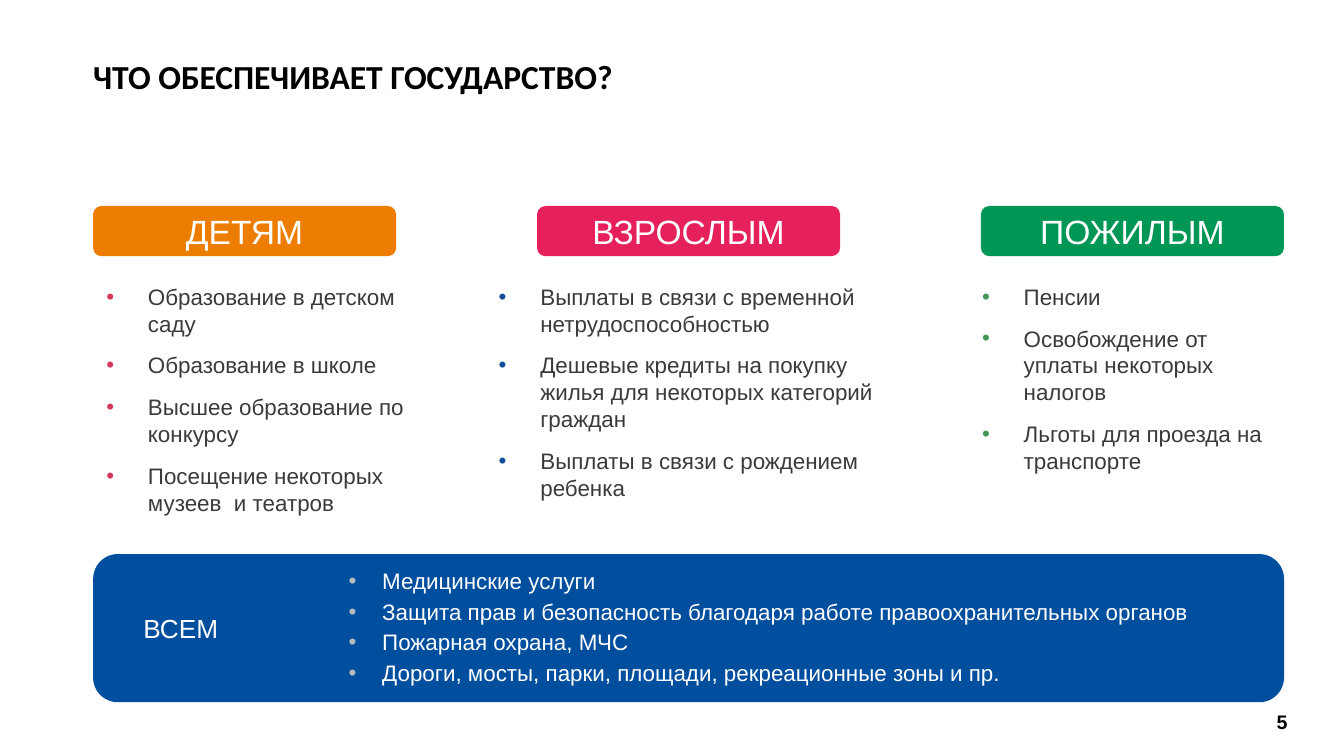
from collections import namedtuple

from lxml.etree import SubElement
from pptx import Presentation
from pptx.dml.color import RGBColor
from pptx.enum.shapes import MSO_SHAPE as Preset
from pptx.enum.text import MSO_ANCHOR as Anchor, PP_ALIGN as Align
from pptx.oxml.ns import qn
from pptx.util import Inches, Pt

BLACK = RGBColor(0x00, 0x00, 0x00)
WHITE = RGBColor(0xFF, 0xFF, 0xFF)
GRAPHITE = RGBColor(0x39, 0x3B, 0x3B)
ORANGE = RGBColor(0xED, 0x7D, 0x00)
PINK = RGBColor(0xE5, 0x20, 0x5A)
GREEN = RGBColor(0x00, 0x96, 0x55)
BLUE = RGBColor(0x00, 0x4E, 0x9E)
RED_BULLET = RGBColor(0xD3, 0x39, 0x5C)
BLUE_BULLET = RGBColor(0x14, 0x4E, 0x99)
GREEN_BULLET = RGBColor(0x43, 0x97, 0x57)
GREY_BULLET = RGBColor(0xB7, 0xBB, 0xBE)

WIDTH = Inches(10)
HEIGHT = WIDTH * 9 // 16
COLUMN, ROW = WIDTH / 100, HEIGHT / 100
LEFT_EDGE, GROUP_WIDTH, GROUP_STEP = 6.93, 22.55, 33.03

Box = namedtuple("Box", "left top width height")
Group = namedtuple("Group", "name fill bullet list_shift list_width items")

GROUPS = [
    Group("ДЕТЯМ", ORANGE, RED_BULLET, 0, 1.15, [
        "Образование в детском саду",
        "Образование в школе",
        "Высшее образование по конкурсу",
        "Посещение некоторых музеев  и театров",
    ]),
    Group("ВЗРОСЛЫМ", PINK, BLUE_BULLET, -0.17, 1.36, [
        "Выплаты в связи с временной нетрудоспособностью",
        "Дешевые кредиты на покупку жилья для некоторых категорий граждан",
        "Выплаты в связи с рождением ребенка",
    ]),
    Group("ПОЖИЛЫМ", GREEN, GREEN_BULLET, -0.04, 1.04, [
        "Пенсии",
        "Освобождение от уплаты некоторых налогов",
        "Льготы для проезда на транспорте",
    ]),
]
SHARED_ITEMS = [
    "Медицинские услуги",
    "Защита прав и безопасность благодаря работе правоохранительных органов",
    "Пожарная охрана, МЧС",
    "Дороги, мосты, парки, площади, рекреационные зоны и пр.",
]


def grid_box(column, row, columns, rows):
    return Box(round(column * COLUMN), round(row * ROW),
               round(columns * COLUMN), round(rows * ROW))


def part(box, left, top, width, height):
    return Box(round(box.left + left * box.width), round(box.top + top * box.height),
               round(box.width * width), round(box.height * height))


def set_frame(shape, side_margin, end_margin, anchor):
    frame = shape.text_frame
    frame.word_wrap = True
    frame.vertical_anchor = anchor
    frame.margin_left = frame.margin_right = Inches(side_margin)
    frame.margin_top = frame.margin_bottom = Inches(end_margin)
    return frame


def set_font(paragraph, size, color, name="Arial", bold=False):
    for run in paragraph.runs:
        run.font.name, run.font.size, run.font.bold = name, Pt(size), bold
        run.font.color.rgb = color


def add_label(slide, box, text, size, color, anchor=Anchor.TOP, margin=0,
              align=Align.LEFT, name="Arial", bold=False):
    frame = set_frame(slide.shapes.add_textbox(*box), margin, margin, anchor)
    frame.text = text
    frame.paragraphs[0].alignment = align
    set_font(frame.paragraphs[0], size, color, name, bold)


def add_panel(slide, box, fill, text, size, align):
    shape = slide.shapes.add_shape(Preset.ROUNDED_RECTANGLE, *box)
    shape.shadow.inherit = False
    shape.fill.solid()
    shape.fill.fore_color.rgb = fill
    shape.line.fill.background()
    frame = set_frame(shape, 0.1, 0.05, Anchor.MIDDLE)
    frame.text = text
    frame.paragraphs[0].alignment = align
    set_font(frame.paragraphs[0], size, WHITE)
    return frame


def add_bullet(paragraph, color, indent):
    properties = paragraph._p.get_or_add_pPr()
    properties.set("marL", str(Inches(indent)))
    properties.set("indent", str(-Inches(indent)))
    bullet_color = SubElement(properties, qn("a:buClr"))
    SubElement(bullet_color, qn("a:srgbClr"), val=str(color))
    SubElement(properties, qn("a:buFont"), typeface="Arial")
    SubElement(properties, qn("a:buChar"), char="•")


def add_list(slide, box, items, color, bullet, indent, before, after, margins, anchor):
    frame = set_frame(slide.shapes.add_textbox(*box), *margins, anchor)
    frame.text = "\n".join(items)
    for index, paragraph in enumerate(frame.paragraphs):
        paragraph.space_before = Pt(before if index else 0)
        paragraph.space_after = Pt(after)
        add_bullet(paragraph, bullet, indent)
        set_font(paragraph, 12, color)


def add_group(slide, box, group):
    add_panel(slide, part(box, 0, 0, 1, 0.15), group.fill, group.name, 18, Align.CENTER)
    list_box = part(box, group.list_shift, 0.21, group.list_width, 0.79)
    add_list(slide, list_box, group.items, GRAPHITE, group.bullet,
             0.31, 4, 4, (0.1, 0.05), Anchor.TOP)


def add_shared_band(slide, box):
    frame = add_panel(slide, box, BLUE, "ВСЕМ", 14, Align.LEFT)
    frame.margin_left = Inches(0.32)
    add_list(slide, part(box, 0.21, 0.01, 0.74, 0.96), SHARED_ITEMS, WHITE,
             GREY_BULLET, 0.25, 2, 0, (0.04, 0.03), Anchor.MIDDLE)


def main():
    presentation = Presentation()
    presentation.slide_width, presentation.slide_height = WIDTH, HEIGHT
    slide = presentation.slides.add_slide(presentation.slide_layouts[6])
    add_label(slide, grid_box(LEFT_EDGE, 7.4, 75.3, 13.3),
              "ЧТО ОБЕСПЕЧИВАЕТ ГОСУДАРСТВО?", 18, BLACK, name="Calibri", bold=True)
    for index, group in enumerate(GROUPS):
        left = LEFT_EDGE + index * GROUP_STEP
        add_group(slide, grid_box(left, 27.25, GROUP_WIDTH, 44.3), group)
    add_shared_band(slide, grid_box(LEFT_EDGE, 73.3, 2 * GROUP_STEP + GROUP_WIDTH, 19.6))
    add_label(slide, grid_box(91.4, 92.8, 8, 5.3), "5", 10.5, BLACK,
              Anchor.MIDDLE, 0.06, Align.CENTER, bold=True)
    presentation.save("out.pptx")


if __name__ == "__main__":
    main()
